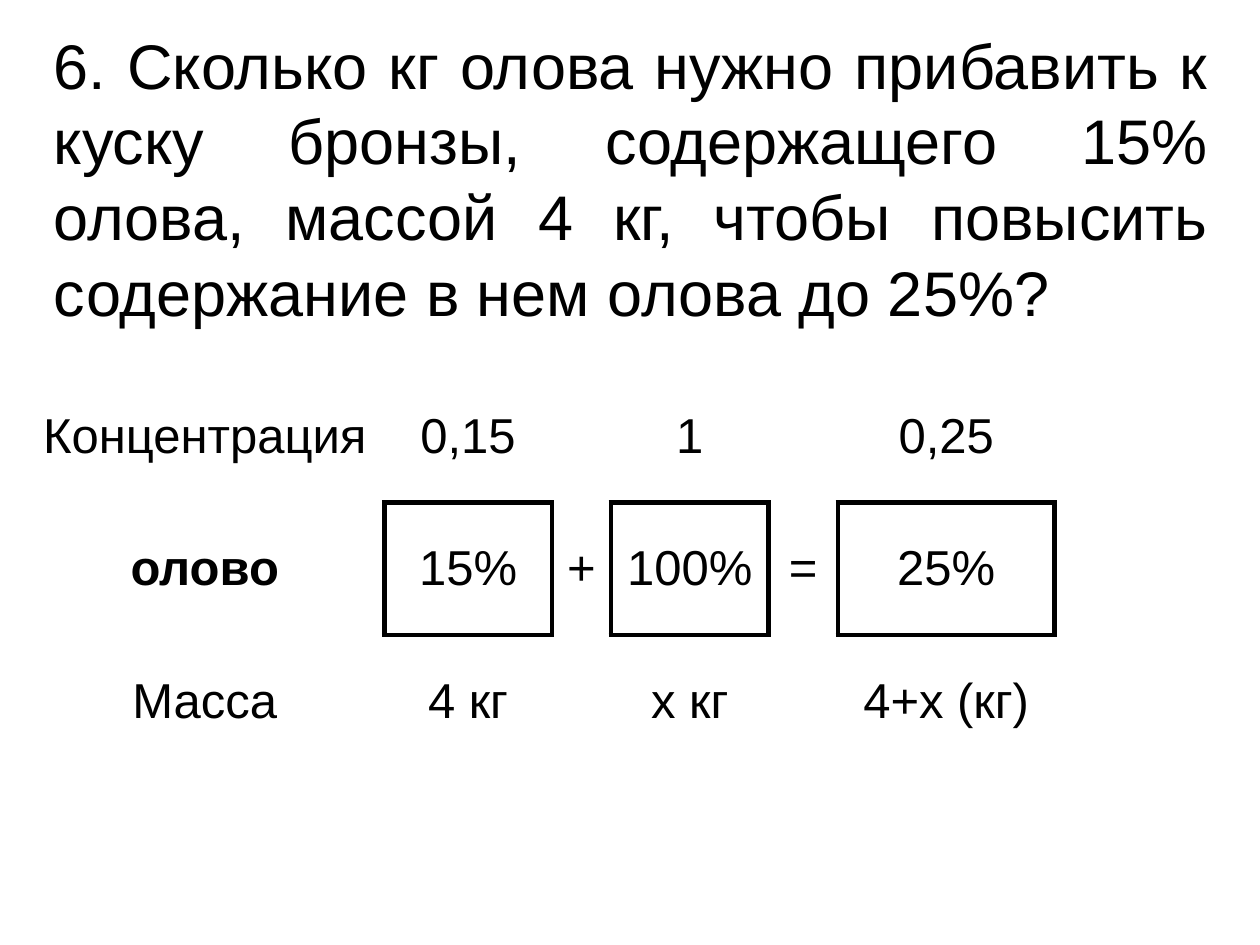
import pptx
import pptx.util
import pptx.dml.color
import pptx.enum.text
import pptx.oxml.ns
from lxml import etree
from pptx.util import Inches

COLORS = {"ink": "000000", "paper": "FFFFFF"}
ALIGN = pptx.enum.text.PP_ALIGN
ANCHOR = pptx.enum.text.MSO_ANCHOR
QUESTION = (
    "6. Сколько кг олова нужно прибавить к куску бронзы, содержащего 15% "
    "олова, массой 4 кг, чтобы повысить содержание в нем олова до 25%?"
)
ROWS = [
    ["Концентрация", "0,15", "", "1", "", "0,25"],
    ["олово", "15%", "+", "100%", "=", "25%"],
    ["Масса", "4 кг", "", "x кг", "", "4+x (кг)"],
]
WIDTHS = [2.85, 1.33, 0.47, 1.25, 0.55, 1.72]
HEIGHT = 1.05
BOXES = {(1, 1), (1, 3), (1, 5)}
SIDES = {"L": (0, -1), "R": (0, 1), "T": (-1, 0), "B": (1, 0)}


def rgb(name):
    return pptx.dml.color.RGBColor.from_string(COLORS[name])


def write(frame, text, size=28, bold=False, align=ALIGN.CENTER):
    par = frame.paragraphs[0]
    par.alignment = align
    run = par.add_run()
    run.text = text
    font = run.font
    font.name = "Arial"
    font.size = pptx.util.Pt(size)
    font.bold = bold
    font.color.rgb = rgb("ink")


def add_title(slide):
    box = slide.shapes.add_textbox(
        Inches(0.33), Inches(0.16), Inches(9.36), Inches(2.52))
    frame = box.text_frame
    frame.word_wrap = True
    frame.auto_size = pptx.enum.text.MSO_AUTO_SIZE.SHAPE_TO_FIT_TEXT
    write(frame, QUESTION, size=36, align=ALIGN.JUSTIFY)


def add_edges(cell, row, col):
    """Draw the sides that this cell shares with a box; hide the rest."""
    tag = pptx.oxml.ns.qn
    props = cell._tc.get_or_add_tcPr()
    for side, (down, over) in SIDES.items():
        line = etree.SubElement(props, tag("a:ln" + side))
        if BOXES & {(row, col), (row + down, col + over)}:
            line.set("w", str(pptx.util.Pt(3)))
            fill = etree.SubElement(line, tag("a:solidFill"))
            etree.SubElement(fill, tag("a:srgbClr"), val=COLORS["ink"])
        else:
            line.set("w", "0")
            etree.SubElement(line, tag("a:noFill"))


def add_grid(slide):
    table = slide.shapes.add_table(
        len(ROWS), len(WIDTHS), Inches(0.2), Inches(2.94),
        Inches(sum(WIDTHS)), Inches(HEIGHT * len(ROWS))).table
    table.first_row = table.horz_banding = False
    for col, width in enumerate(WIDTHS):
        table.columns[col].width = Inches(width)
    for row, texts in enumerate(ROWS):
        table.rows[row].height = Inches(HEIGHT)
        for col, text in enumerate(texts):
            cell = table.cell(row, col)
            cell.vertical_anchor = ANCHOR.MIDDLE
            cell.margin_left = cell.margin_right = Inches(0.05)
            add_edges(cell, row, col)
            cell.fill.background()
            if text:
                write(cell.text_frame, text, bold=text == "олово")


def main():
    deck = pptx.Presentation()
    deck.slide_width, deck.slide_height = Inches(10), Inches(7.5)
    slide = deck.slides.add_slide(deck.slide_layouts[6])
    slide.background.fill.solid()
    slide.background.fill.fore_color.rgb = rgb("paper")
    add_title(slide)
    add_grid(slide)
    deck.save("out.pptx")


if __name__ == "__main__":
    main()
